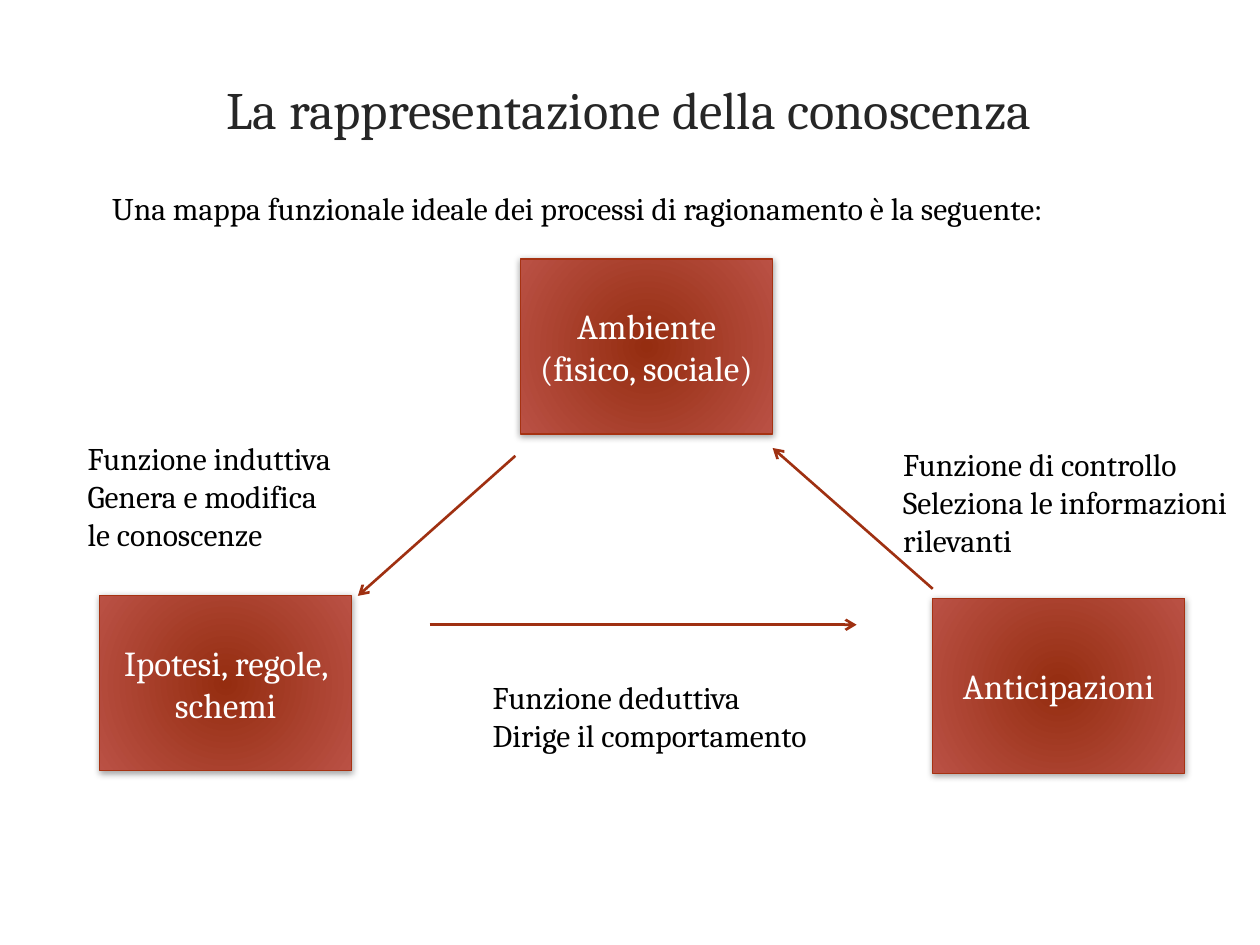
from pptx import Presentation
from pptx.dml.color import RGBColor
from pptx.enum.shapes import MSO_CONNECTOR, MSO_SHAPE
from pptx.enum.text import MSO_ANCHOR, MSO_AUTO_SIZE, PP_ALIGN
from pptx.oxml import parse_xml
from pptx.oxml.ns import qn
from pptx.util import Pt

RECT = MSO_SHAPE.RECTANGLE
STRAIGHT = MSO_CONNECTOR.STRAIGHT
MIDDLE = MSO_ANCHOR.MIDDLE
CENTER, LEFT = PP_ALIGN.CENTER, PP_ALIGN.LEFT
GROW = MSO_AUTO_SIZE.SHAPE_TO_FIT_TEXT
FONT = "Cambria"
NS = 'xmlns:a="http://schemas.openxmlformats.org/drawingml/2006/main"'
GRADIENT = f"""<a:gradFill {NS} rotWithShape="1"><a:gsLst>
<a:gs pos="0"><a:srgbClr val="952D10"/></a:gs>
<a:gs pos="100000"><a:srgbClr val="BA5145"/></a:gs></a:gsLst>
<a:path path="circle"><a:fillToRect l="40000" t="100000" r="40000" b="100000"/></a:path>
</a:gradFill>"""
SHADOW = f"""<a:outerShdw {NS} blurRad="{Pt(4)}" dist="{Pt(1)}" dir="5400000"
 rotWithShape="0"><a:srgbClr val="000000"><a:alpha val="37000"/></a:srgbClr></a:outerShdw>"""
BOX_W, BOX_H = 144, 100


def rgb(value):
    return RGBColor.from_string(value)


def write(tf, lines, size, color, align=LEFT):
    tf.text = "\n".join(lines)
    for p in tf.paragraphs:
        p.alignment = align
        p.font.name = FONT
        p.font.size = Pt(size)
        p.font.color.rgb = rgb(color)


def place_title(s, box, text):
    sp = s.shapes.title
    sp.left, sp.top, sp.width, sp.height = map(Pt, box)
    sp.text_frame.vertical_anchor = MIDDLE
    write(sp.text_frame, [text], 30, "262626", CENTER)


def add_label(s, box, lines, wrap=False):
    tf = s.shapes.add_textbox(*map(Pt, box)).text_frame
    tf.word_wrap = wrap
    tf.auto_size = GROW
    write(tf, lines, 18, "000000")


def add_node(s, left, top, text):
    sp = s.shapes.add_shape(RECT, Pt(left), Pt(top), Pt(BOX_W), Pt(BOX_H))
    sp.line.color.rgb = rgb("A63212")
    sp.line.width = Pt(0.75)
    sp.shadow.inherit = False
    props = sp._element.spPr
    props.find(qn("a:prstGeom")).addnext(parse_xml(GRADIENT))
    props.find(qn("a:effectLst")).append(parse_xml(SHADOW))
    sp.text_frame.vertical_anchor = MIDDLE
    write(sp.text_frame, [text], 20, "FFFFFF", CENTER)


def add_arrow(s, start, end):
    line = s.shapes.add_connector(STRAIGHT, *map(Pt, start + end))
    line.line.color.rgb = rgb("9F3011")
    line.line.width = Pt(1.5)
    props = line._element.spPr
    props.find(qn("a:ln")).append(parse_xml(f'<a:tailEnd {NS} type="arrow"/>'))
    props.append(parse_xml(f"<a:effectLst {NS}/>"))


def add_reasoning_map(s, left, top):
    """Three nodes joined in a cycle, with a label by each arrow."""
    def at(x, y):
        return left + x, top + y

    for x, y, text in [(240.5, 0, "Ambiente (fisico, sociale)"),
                       (0, 192.5, "Ipotesi, regole, schemi"),
                       (476, 194, "Anticipazioni")]:
        add_node(s, *at(x, y), text)
    for x, y, w, h, lines in [
        (-14, 99.5, 161, 73,
         ["Funzione induttiva", "Genera e modifica", "le conoscenze"]),
        (217.5, 236, 205, 51,
         ["Funzione deduttiva", "Dirige il comportamento"]),
        (452, 103, 210, 73,
         ["Funzione di controllo", "Seleziona le informazioni", "rilevanti"]),
    ]:
        add_label(s, at(x, y) + (w, h), lines)
    for start, end in [((237.5, 112.5), (147.5, 192.5)),
                       ((476, 188.5), (384.5, 108)),
                       ((188.5, 209), (432.5, 209))]:
        add_arrow(s, at(*start), at(*end))


def main():
    prs = Presentation()
    prs.slide_width, prs.slide_height = Pt(720), Pt(540)
    s = prs.slides.add_slide(prs.slide_layouts[5])
    place_title(s, (43, 5, 633, 114), "La rappresentazione della conoscenza")
    add_label(s, (57, 104.5, 620, 29),
              ["Una mappa funzionale ideale dei processi di ragionamento è la seguente:"],
              wrap=True)
    add_reasoning_map(s, 57, 148)
    prs.save("out.pptx")


if __name__ == "__main__":
    main()
